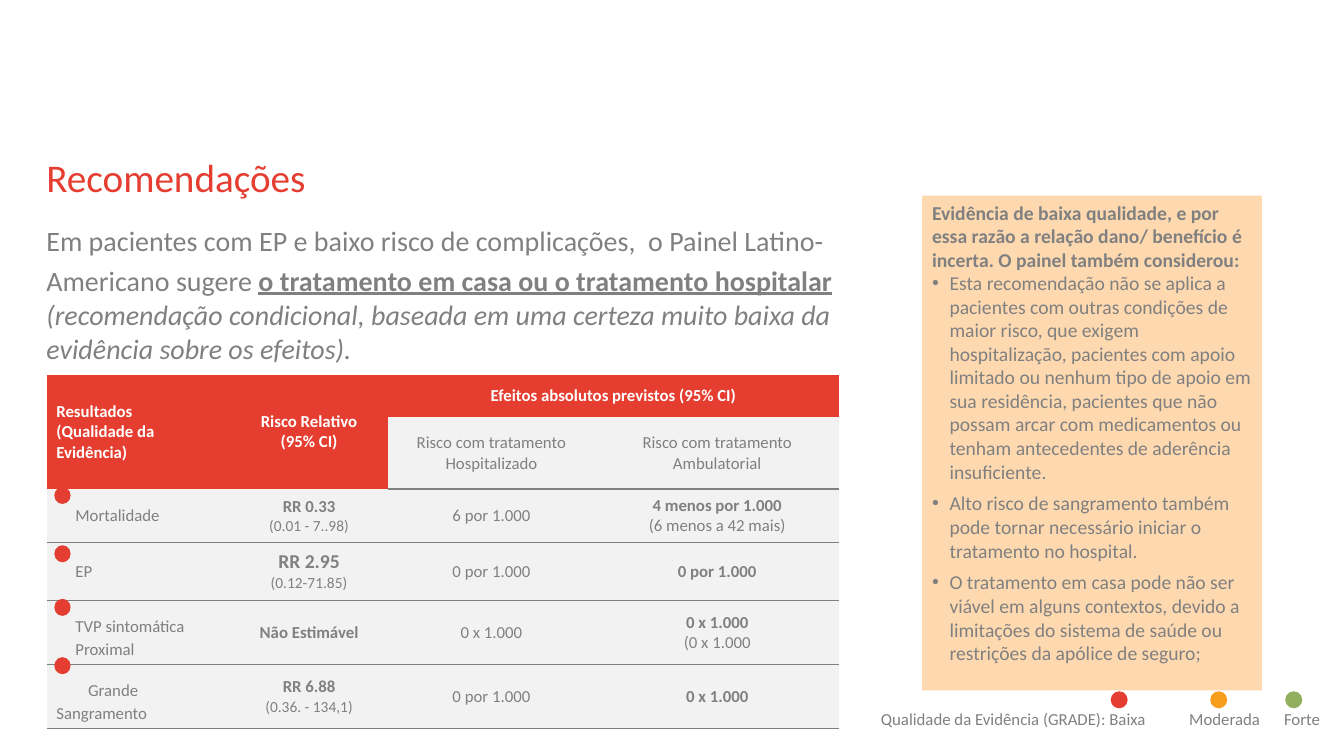
"""Build the slide with the recommendation, its evidence table and the panel's considerations."""
import lxml.etree
import pptx
import pptx.dml.color
import pptx.enum.shapes
import pptx.enum.text
import pptx.oxml.ns
import pptx.util

Cm, Pt = pptx.util.Cm, pptx.util.Pt
qn = pptx.oxml.ns.qn
ALIGN = pptx.enum.text.PP_ALIGN
MSO = pptx.enum.shapes.MSO_SHAPE


class Theme:
    font = "Calibri"
    red, dot_red, orange, green = "E53E31", "E43E32", "F99D1C", "91AF5F"
    gray, pale, peach, white = "808080", "F2F2F2", "FED9B0", "FFFFFF"
    title, body, wide, panel, lead, cell, small = 28, 20, 24, 14, 14, 12, 11


def style(p, size, color=Theme.gray, bold=False):
    for r in p.runs:
        r.font.name, r.font.size, r.font.bold = Theme.font, Pt(size), bold
        r.font.color.rgb = pptx.dml.color.RGBColor.from_string(color)


def add_block(kind, left, top, width, height, color):
    sp = s.shapes.add_shape(kind, Cm(left), Cm(top), Cm(width), Cm(height))
    sp.shadow.inherit = False
    sp.fill.solid()
    sp.fill.fore_color.rgb = pptx.dml.color.RGBColor.from_string(color)
    sp.line.fill.background()
    return sp


prs = pptx.Presentation()
prs.slide_width, prs.slide_height = Cm(33.87), Cm(19.05)
s = prs.slides.add_slide(prs.slide_layouts[6])

tf = s.shapes.add_textbox(Cm(1.17), Cm(3.73), Cm(30.48), Cm(1.98)).text_frame
tf.word_wrap = True
tf.margin_left = 0
tf.text = "Recomendações"
style(tf.paragraphs[0], Theme.title, Theme.red)

tf = s.shapes.add_textbox(Cm(1.17), Cm(5.64), Cm(21.67), Cm(3.7)).text_frame
tf.word_wrap = True
tf.margin_left = tf.margin_top = tf.margin_right = tf.margin_bottom = 0
p = tf.paragraphs[0]
for text in (
    "Em pacientes com EP e baixo risco de complicações,  o Painel Latino-Americano sugere ",
    "o tratamento em casa ou o tratamento hospitalar",
    " ",
    "(recomendação condicional, baseada em uma certeza muito baixa da evidência sobre os efeitos).",
):
    p.add_run().text = text
style(p, Theme.body)
intro, advice, gap, strength = p.runs
advice.font.bold = advice.font.underline = True
gap.font.size = Pt(Theme.wide)
strength.font.italic = True

headers = [
    ["Resultados\n(Qualidade da Evidência)", "Risco Relativo\n(95% CI)",
     "Efeitos absolutos previstos (95% CI)", ""],
    ["", "", "Risco com tratamento Hospitalizado", "Risco com tratamento Ambulatorial"],
]
results = [
    ["Mortalidade", "RR 0.33\n(0.01 - 7..98)", "6 por 1.000", "4 menos por 1.000\n(6 menos a 42 mais)"],
    ["EP", "RR 2.95\n(0.12-71.85)", "0 por 1.000", "0 por 1.000"],
    ["TVP sintomática\nProximal", "Não Estimável", "0 x 1.000", "0 x 1.000\n(0 x 1.000"],
    ["Grande Sangramento", "RR 6.88\n(0.36. - 134,1)", "0 por 1.000", "0 x 1.000"],
]
col_widths = [4.62, 3.96, 5.23, 6.15]
row_heights = [1.07, 1.8, 1.36, 1.45, 1.62, 1.6]
frame = s.shapes.add_table(6, 4, Cm(1.19), Cm(9.45), Cm(sum(col_widths)), Cm(sum(row_heights)))
table = frame.table
table.first_row = table.horz_banding = False
table._tbl.tblPr.find(qn("a:tableStyleId")).text = "{2D5ABB26-0587-4C30-8999-92F81FD0307C}"
for column, width in zip(table.columns, col_widths):
    column.width = Cm(width)
for row, height in zip(table.rows, row_heights):
    row.height = Cm(height)
for start, end in (((0, 0), (1, 0)), ((0, 1), (1, 1)), ((0, 2), (0, 3))):
    table.cell(*start).merge(table.cell(*end))

for i, row in enumerate(headers + results):
    for j, text in enumerate(row):
        cell = table.cell(i, j)
        is_red = i == 0 or (i == 1 and j < 2)
        cell.vertical_anchor = pptx.enum.text.MSO_ANCHOR.MIDDLE
        cell.margin_left = cell.margin_right = Cm(0.23)
        if not is_red:
            border = lxml.etree.SubElement(cell._tc.get_or_add_tcPr(), qn("a:lnB"), w=str(Pt(1)))
            fill = lxml.etree.SubElement(border, qn("a:solidFill"))
            lxml.etree.SubElement(fill, qn("a:srgbClr"), val=Theme.gray)
        cell.fill.solid()
        cell.fill.fore_color.rgb = pptx.dml.color.RGBColor.from_string(Theme.red if is_red else Theme.pale)
        cell.text_frame.text = text
        for k, p in enumerate(cell.text_frame.paragraphs):
            p.alignment = ALIGN.CENTER if j else ALIGN.LEFT
            is_detail = i > 1 and j == 1 and k == 1
            is_bold = is_red or (i > 1 and j in (1, 3) and k == 0)
            style(p, Theme.small if is_detail else Theme.cell, Theme.white if is_red else Theme.gray, is_bold)
            if j == 0 and i > 3:
                p.line_spacing = 1.1
        if j == 0 and 1 < i < 5:
            cell.margin_left = Cm(0.71)
        if j == 0 and i > 3:
            cell.margin_top = Cm(0.36)

style(table.cell(3, 1).text_frame.paragraphs[0], Theme.lead, bold=True)
table.cell(5, 0).text_frame.paragraphs[0]._p.get_or_add_pPr().set("indent", str(Cm(0.8)))

panel = add_block(MSO.RECTANGLE, 23.24, 4.93, 8.56, 12.47, Theme.peach)
tf = panel.text_frame
tf.word_wrap = True
tf.vertical_anchor = pptx.enum.text.MSO_ANCHOR.TOP
tf.text = "\n".join([
    "Evidência de baixa qualidade, e por essa razão a relação dano/ benefício é incerta. O painel também considerou:",
    "Esta recomendação não se aplica a pacientes com outras condições de maior risco, que exigem hospitalização, "
    "pacientes com apoio limitado ou nenhum tipo de apoio em sua residência, pacientes que não possam arcar com "
    "medicamentos ou tenham antecedentes de aderência insuficiente.",
    "Alto risco de sangramento também pode tornar necessário iniciar o tratamento no hospital.",
    "O tratamento em casa pode não ser viável em alguns contextos, devido a limitações do sistema de saúde ou "
    "restrições da apólice de seguro;",
])
for k, p in enumerate(tf.paragraphs):
    p.alignment = ALIGN.LEFT
    if k:
        pPr = p._p.get_or_add_pPr()
        pPr.set("marL", str(Cm(0.44)))
        pPr.set("indent", str(-Cm(0.44)))
        lxml.etree.SubElement(pPr, qn("a:buFont"), typeface="Arial")
        lxml.etree.SubElement(pPr, qn("a:buChar"), char="•")
        p.space_after = Pt(6)
    style(p, Theme.panel, bold=k == 0)

for top in (12.27, 13.74, 15.09, 16.56):
    add_block(MSO.OVAL, 1.37, top, 0.41, 0.43, Theme.dot_red)

tf = s.shapes.add_textbox(Cm(21.95), Cm(17.73), Cm(11.9), Cm(0.8)).text_frame
tf.word_wrap = True
tf.text = "Qualidade da Evidência (GRADE): Baixa\tModerada\tForte"
p = tf.paragraphs[0]
tabs = lxml.etree.SubElement(p._p.get_or_add_pPr(), qn("a:tabLst"))
for stop in (7.77, 10.16):
    lxml.etree.SubElement(tabs, qn("a:tab"), pos=str(Cm(stop)), algn="l")
style(p, Theme.cell)
for left, color in ((27.99, Theme.dot_red), (30.5, Theme.orange), (32.39, Theme.green)):
    add_block(MSO.OVAL, left, 17.42, 0.43, 0.43, color)

prs.save("out.pptx")
